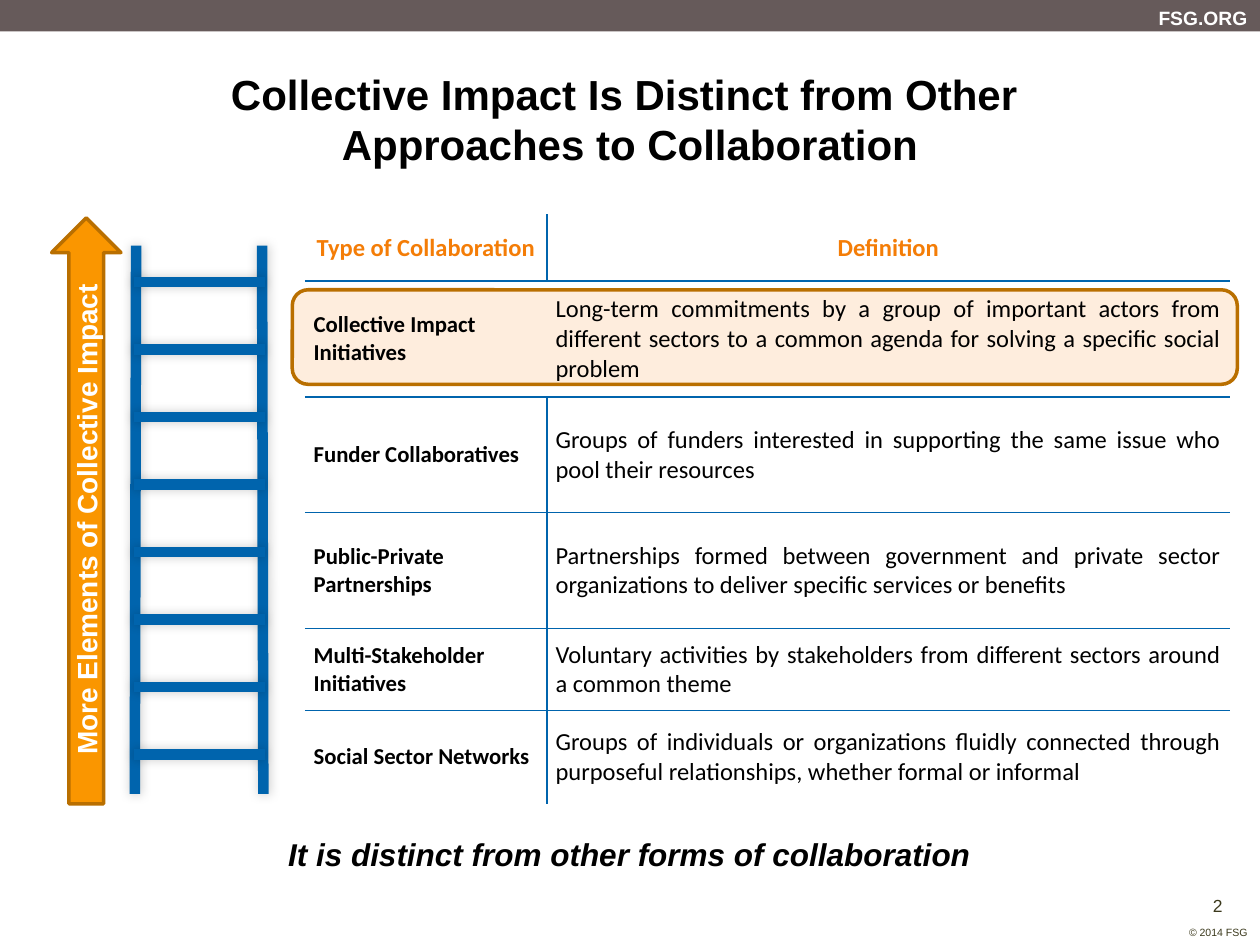
from lxml.etree import SubElement
from pptx import Presentation
from pptx.dml.color import RGBColor
from pptx.enum.shapes import MSO_CONNECTOR, MSO_SHAPE
from pptx.enum.text import MSO_ANCHOR, MSO_AUTO_SIZE, PP_ALIGN as Align
from pptx.oxml import parse_xml
from pptx.oxml.ns import nsdecls, qn
from pptx.util import Inches, Pt

WHITE = RGBColor(0xFF, 0xFF, 0xFF)
BLACK = RGBColor(0x00, 0x00, 0x00)
TAUPE = RGBColor(0x66, 0x5A, 0x5A)
OLIVE = RGBColor(0x3B, 0x39, 0x1C)
PEACH = RGBColor(0xFE, 0xED, 0xDD)
AMBER = RGBColor(0xFA, 0x96, 0x00)
BROWN = RGBColor(0xB9, 0x6F, 0x00)
ORANGE = RGBColor(0xF4, 0x7D, 0x07)
BLUE = RGBColor(0x00, 0x64, 0xAD)

HEADERS = ("Type of Collaboration", "Definition")
APPROACHES = [
    ("Collective Impact Initiatives",
     "Long-term commitments by a group of important actors from different sectors "
     "to a common agenda for solving a specific social problem"),
    ("Funder Collaboratives",
     "Groups of funders interested in supporting the same issue who pool their resources"),
    ("Public-Private Partnerships",
     "Partnerships formed between government and private sector organizations "
     "to deliver specific services or benefits"),
    ("Multi-Stakeholder Initiatives",
     "Voluntary activities by stakeholders from different sectors around a common theme"),
    ("Social Sector Networks",
     "Groups of individuals or organizations fluidly connected through purposeful "
     "relationships, whether formal or informal"),
]
COLUMN_WIDTHS = (1.92, 5.42)
ROW_HEIGHTS = (0.53, 0.92, 0.92, 0.92, 0.65, 0.74)
HIGHLIGHTED_ROW = 1
RUNG_COUNT = 8


def write(frame, text, size, color=BLACK, font="Arial", bold=False, italic=False,
          align=Align.LEFT, anchor=MSO_ANCHOR.MIDDLE):
    """Fill a text frame with one paragraph; a vertical tab breaks the line."""
    frame.vertical_anchor = anchor
    para = frame.paragraphs[0]
    para.text = text
    para.alignment = align
    for span in para.runs:
        span.font.name = font
        span.font.size = Pt(size)
        span.font.bold = bold
        span.font.italic = italic
        span.font.color.rgb = color


def set_margins(frame, side, end):
    frame.margin_left = frame.margin_right = Inches(side)
    frame.margin_top = frame.margin_bottom = Inches(end)


def add_text(slide, left, top, width, height, text, size, wrap=False, margin=0.05, **style):
    box = slide.shapes.add_textbox(Inches(left), Inches(top), Inches(width), Inches(height))
    box.text_frame.word_wrap = wrap
    set_margins(box.text_frame, 0.1, margin)
    write(box.text_frame, text, size, **style)


def add_block(slide, kind, left, top, width, height, fill, outline=None):
    block = slide.shapes.add_shape(
        kind, Inches(left), Inches(top), Inches(width), Inches(height))
    block.shadow.inherit = False
    block.fill.solid()
    block.fill.fore_color.rgb = fill
    if outline is None:
        block.line.fill.background()
    else:
        block.line.color.rgb = outline
        block.line.width = Pt(2)
    return block


def add_beam(group, x1, y1, x2, y2):
    """Add one thick ladder line with a soft shadow."""
    beam = group.shapes.add_connector(
        MSO_CONNECTOR.STRAIGHT, Inches(x1), Inches(y1), Inches(x2), Inches(y2))
    beam.line.color.rgb = BLUE
    beam.line.width = Pt(6)
    beam._element.spPr.append(parse_xml(
        f'<a:effectLst {nsdecls("a")}>'
        f'<a:outerShdw blurRad="{Pt(6)}" dist="0" dir="18900000">'
        '<a:srgbClr val="000000"><a:alpha val="20000"/></a:srgbClr>'
        '</a:outerShdw></a:effectLst>'))


def add_ladder(slide):
    ladder = slide.shapes.add_group_shape()
    add_beam(ladder, 1.08, 1.95, 1.07, 6.3)
    add_beam(ladder, 2.08, 1.95, 2.09, 6.3)
    first, last = 2.24, 5.99
    for index in range(RUNG_COUNT):
        y = first + index * (last - first) / (RUNG_COUNT - 1)
        add_beam(ladder, 2.1, y, 1.06, y)


def set_borders(cell, visible_sides):
    """Draw the sides named in visible_sides (of L, R, T, B) and clear the others."""
    properties = cell._tc.get_or_add_tcPr()
    for position, side in enumerate("LRTB"):
        line = parse_xml(f'<a:ln{side} {nsdecls("a")} w="{Pt(1)}"/>')
        if side in visible_sides:
            fill = SubElement(line, qn("a:solidFill"))
            SubElement(fill, qn("a:srgbClr"), val=str(BLUE))
        else:
            SubElement(line, qn("a:noFill"))
        properties.insert(position, line)


def add_approach_table(slide):
    rows = [HEADERS] + APPROACHES
    frame = slide.shapes.add_table(
        len(rows), len(HEADERS), Inches(2.42), Inches(1.7),
        Inches(sum(COLUMN_WIDTHS)), Inches(sum(ROW_HEIGHTS)))
    table = frame.table
    table.first_row = table.horz_banding = False
    for column, width in zip(table.columns, COLUMN_WIDTHS):
        column.width = Inches(width)
    for row, height in zip(table.rows, ROW_HEIGHTS):
        row.height = Inches(height)

    header_style = dict(size=14, color=ORANGE, bold=True, align=Align.CENTER)
    body_styles = (dict(size=13, bold=True), dict(size=14, align=Align.JUSTIFY))
    for r, texts in enumerate(rows):
        for c, text in enumerate(texts):
            cell = table.cell(r, c)
            set_margins(cell, 0.07, 0)
            cell.vertical_anchor = MSO_ANCHOR.MIDDLE
            style = header_style if r == 0 else body_styles[c]
            write(cell.text_frame, text, font="Calibri", **style)
            cell.fill.background()
            sides = "T" if r > 0 else ""
            sides += "B" if r < len(rows) - 1 else ""
            if r != HIGHLIGHTED_ROW:
                sides += "RL"[c]
            set_borders(cell, sides)


def add_title(slide, text):
    title = slide.shapes.title
    title.left, title.top = Inches(0.43), Inches(0.58)
    title.width, title.height = Inches(9.14), Inches(0.72)
    frame = title.text_frame
    frame.auto_size = MSO_AUTO_SIZE.NONE
    frame.word_wrap = True
    set_margins(frame, 0.1, 0)
    write(frame, text, 24, bold=True, align=Align.CENTER)


def add_page_frame(slide):
    add_block(slide, MSO_SHAPE.RECTANGLE, 0, 0, 10, 0.25, TAUPE)
    add_text(slide, 9.09, 0, 0.91, 0.29, "FSG.ORG", 11,
             color=WHITE, bold=True, align=Align.RIGHT)
    add_text(slide, 9.48, 7.08, 0.37, 0.21, "2", 10, margin=0.02,
             color=OLIVE, align=Align.CENTER)
    add_text(slide, 9.33, 7.3, 0.67, 0.2, "© 2014 FSG", 6,
             color=OLIVE, align=Align.RIGHT)


def add_impact_arrow(slide):
    arrow = add_block(slide, MSO_SHAPE.UP_ARROW, 0.41, 1.73, 0.55, 4.65, AMBER, BROWN)
    frame = arrow.text_frame
    frame._txBody.bodyPr.set("vert", "vert270")
    write(frame, "More Elements of Collective Impact", 16,
          color=WHITE, bold=True, align=Align.CENTER)


def main():
    deck = Presentation()
    deck.slide_width, deck.slide_height = Inches(10), Inches(7.5)
    slide = deck.slides.add_slide(deck.slide_layouts[5])
    add_page_frame(slide)
    add_block(slide, MSO_SHAPE.ROUNDED_RECTANGLE, 2.32, 2.3, 7.5, 0.75, PEACH, BROWN)
    add_title(slide, "Collective Impact Is Distinct from Other \vApproaches to Collaboration")
    add_text(slide, 0.35, 6.58, 9.29, 0.4, "It is distinct from other forms of collaboration",
             18, wrap=True, bold=True, italic=True, align=Align.CENTER, anchor=MSO_ANCHOR.TOP)
    add_ladder(slide)
    add_approach_table(slide)
    add_impact_arrow(slide)
    deck.save("out.pptx")


if __name__ == "__main__":
    main()
